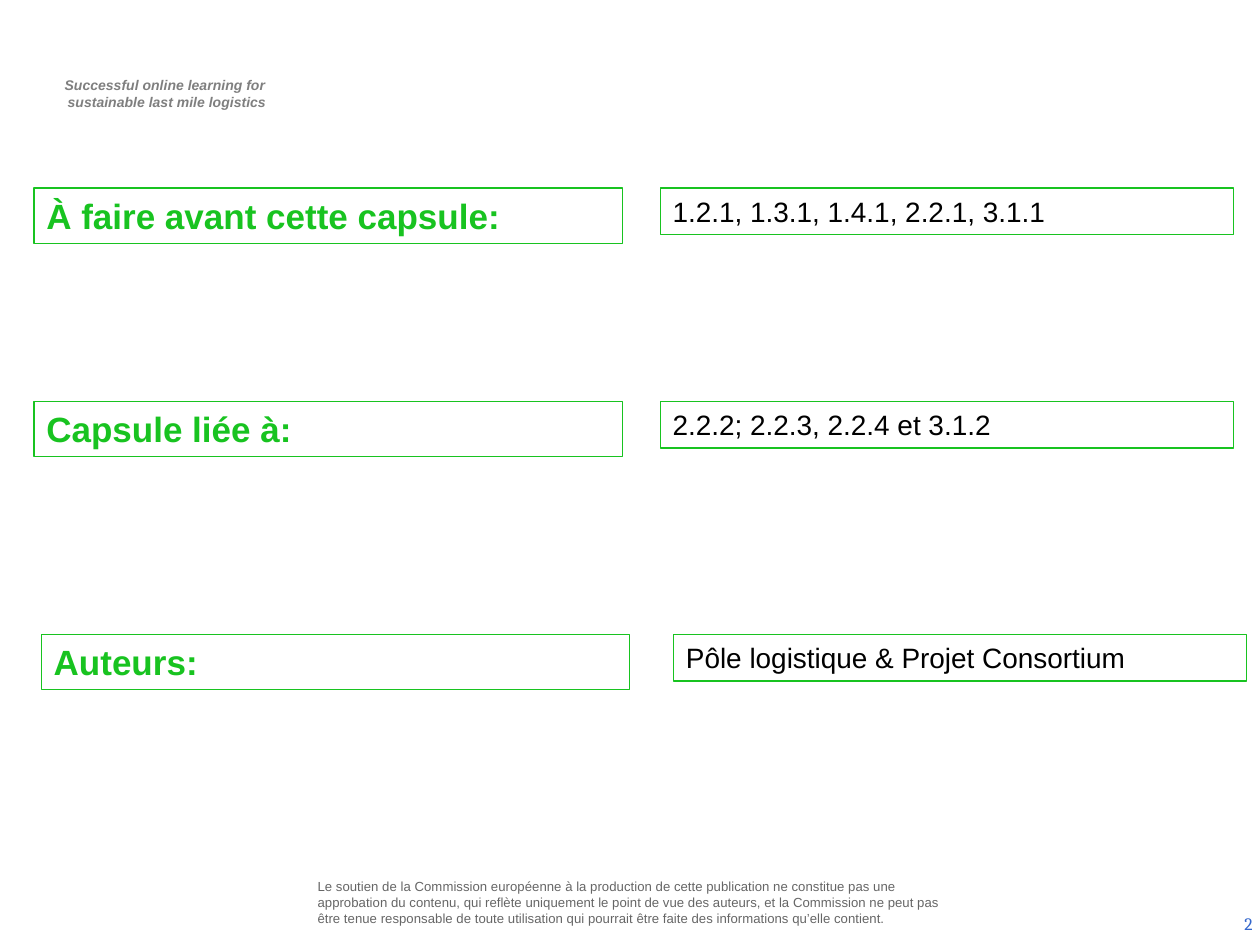
from dataclasses import dataclass

from pptx import Presentation
from pptx.dml.color import RGBColor
from pptx.enum.shapes import MSO_SHAPE
from pptx.enum.text import MSO_ANCHOR as Anchor, MSO_AUTO_SIZE as AutoSize, PP_ALIGN as Align
from pptx.shapes.base import BaseShape
from pptx.slide import Slide
from pptx.util import Pt

GREEN, BLACK, WHITE = "18C320", "000000", "FFFFFF"
BOX_INSETS = (7.2, 3.6)


@dataclass(frozen=True)
class TextStyle:
    size: float
    color: str
    font: str = "Arial"
    bold: bool = False
    italic: bool = False


@dataclass(frozen=True)
class Box:
    left: float
    top: float
    width: float
    height: float


@dataclass(frozen=True)
class InfoRow:
    top: float
    label_left: float
    value_left: float
    label: str
    value: str


LABEL_STYLE = TextStyle(20, GREEN, bold=True)
VALUE_STYLE = TextStyle(16, BLACK)

ROWS = [
    InfoRow(107.5, 19.4, 377.3, "À faire avant cette capsule:", "1.2.1, 1.3.1, 1.4.1, 2.2.1, 3.1.1"),
    InfoRow(229.5, 19.4, 377.3, "Capsule liée à:", "2.2.2; 2.2.3, 2.2.4 et 3.1.2"),
    InfoRow(362.7, 23.6, 384.9, "Auteurs:", "Pôle logistique & Projet Consortium"),
]


def rgb(color: str) -> RGBColor:
    return RGBColor.from_string(color)


def write_text(shape: BaseShape, text: str, style: TextStyle, align: Align = Align.LEFT,
               anchor: Anchor = Anchor.TOP, insets: tuple[float, float] = BOX_INSETS,
               grow: bool = False) -> None:
    frame = shape.text_frame
    frame.text = text
    frame.word_wrap = True
    frame.auto_size = AutoSize.SHAPE_TO_FIT_TEXT if grow else AutoSize.NONE
    frame.vertical_anchor = anchor
    frame.margin_left = frame.margin_right = Pt(insets[0])
    frame.margin_top = frame.margin_bottom = Pt(insets[1])
    for paragraph in frame.paragraphs:
        paragraph.alignment = align
        for run in paragraph.runs:
            run.font.name = style.font
            run.font.size = Pt(style.size)
            run.font.bold = style.bold
            run.font.italic = style.italic
            run.font.color.rgb = rgb(style.color)


def add_text(slide: Slide, box: Box) -> BaseShape:
    return slide.shapes.add_textbox(Pt(box.left), Pt(box.top), Pt(box.width), Pt(box.height))


def add_framed_text(slide: Slide, box: Box, text: str, style: TextStyle) -> None:
    shape = slide.shapes.add_shape(
        MSO_SHAPE.RECTANGLE, Pt(box.left), Pt(box.top), Pt(box.width), Pt(box.height))
    shape.shadow.inherit = False
    shape.fill.solid()
    shape.fill.fore_color.rgb = rgb(WHITE)
    shape.line.color.rgb = rgb(GREEN)
    shape.line.width = Pt(0.75)
    write_text(shape, text, style, grow=True)


def main() -> None:
    presentation = Presentation()
    presentation.slide_width, presentation.slide_height = Pt(720), Pt(540)
    slide = presentation.slides.add_slide(presentation.slide_layouts[6])

    # Project motto
    motto = add_text(slide, Box(20.9, 40.3, 146.2, 26.6))
    write_text(motto, "Successful online learning for \nsustainable last mile logistics",
               TextStyle(8, "7F7F7F", bold=True, italic=True), Align.CENTER, grow=True)
    for paragraph in motto.text_frame.paragraphs:
        properties = paragraph._p.get_or_add_pPr()
        properties.set("marL", str(Pt(2.9)))
        properties.set("indent", "0")

    # Disclaimer
    write_text(
        add_text(slide, Box(178.6, 497.5, 370.1, 36)),
        "Le soutien de la Commission européenne à la production de cette publication ne "
        "constitue pas une approbation du contenu, qui reflète uniquement le point de vue "
        "des auteurs, et la Commission ne peut pas être tenue responsable de toute "
        "utilisation qui pourrait être faite des informations qu’elle contient.",
        TextStyle(7.5, "666666"), anchor=Anchor.MIDDLE, insets=(2.9, 2.9))

    # Slide number
    write_text(add_text(slide, Box(555.1, 513.4, 167.8, 28.8)), "2",
               TextStyle(10, "3366CC", "Cambria"), Align.RIGHT, Anchor.MIDDLE)

    # Labels and their values
    for row in ROWS:
        add_framed_text(slide, Box(row.label_left, row.top, 336.2, 31.5), row.label, LABEL_STYLE)
        add_framed_text(slide, Box(row.value_left, row.top, 327.6, 26.6), row.value, VALUE_STYLE)

    presentation.save("out.pptx")


if __name__ == "__main__":
    main()
